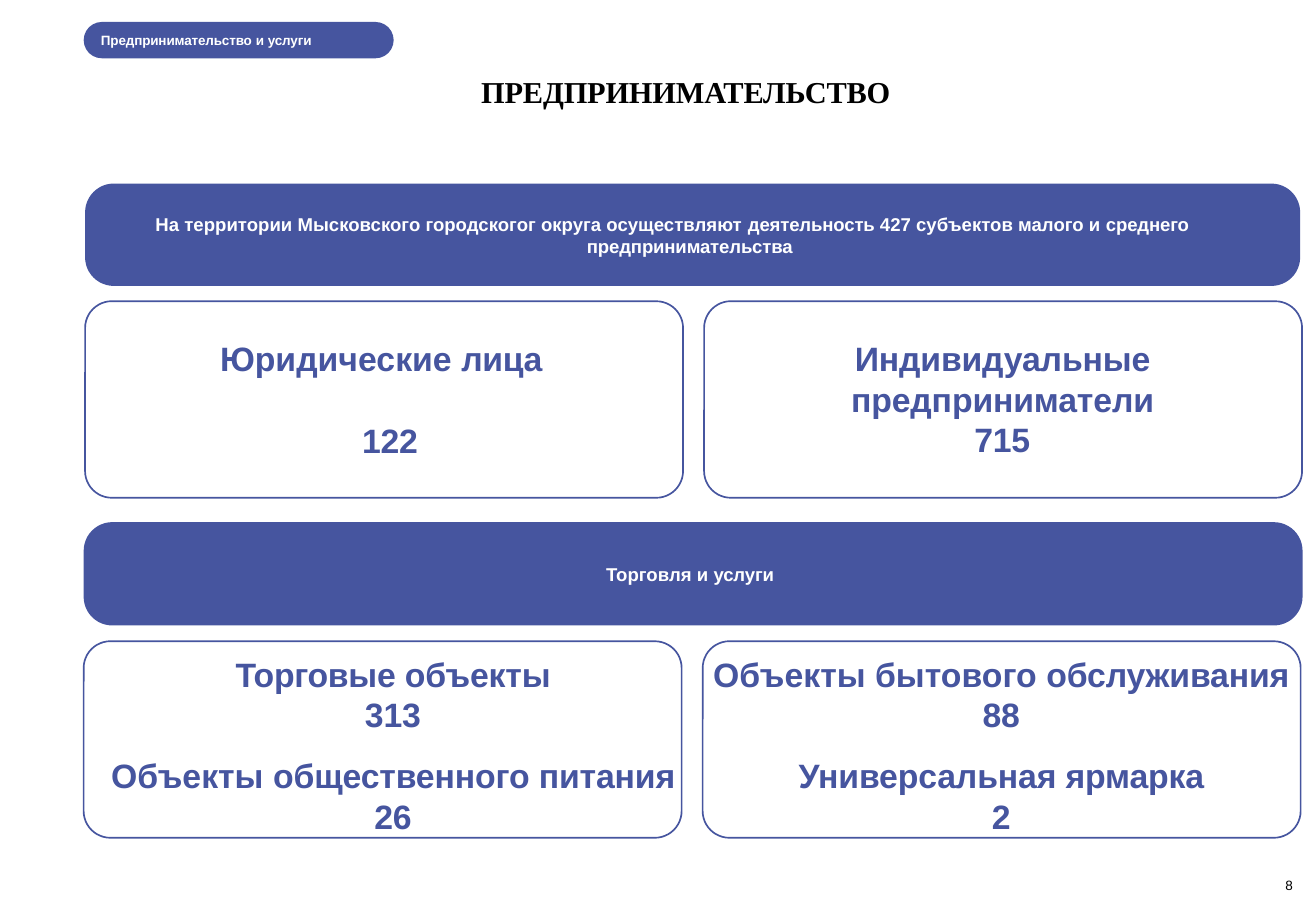
from pptx import Presentation
from pptx import util as u
from pptx.dml.color import RGBColor
from pptx.enum import shapes, text

BLUE, WHITE, BLACK = "46559F", "FFFFFF", "000000"
CARD_W, CARD_H, STEP = 12.5, 4.11, 12.94


def color(code):
    return RGBColor.from_string(code)


def panel(slide, x, y, w, h, radius, filled=True):
    """Rounded panel, either solid blue or outlined in blue."""
    box = slide.shapes.add_shape(shapes.MSO_SHAPE.ROUNDED_RECTANGLE,
                                 u.Cm(x), u.Cm(y), u.Cm(w), u.Cm(h))
    box.shadow.inherit = False
    box.adjustments[0] = radius / min(w, h)
    if filled:
        box.fill.solid()
        box.fill.fore_color.rgb = color(BLUE)
        box.line.fill.background()
    else:
        box.fill.background()
        box.line.color.rgb = color(BLUE)
        box.line.width = u.Pt(1)


def para(runs, left=0, right=0, first=0, gap=0):
    return dict(runs=runs, left=left, right=right, first=first, gap=gap)


def label(slide, x, y, w, h, paras, size, tint, center=False,
          font="Arial", bold=True, top=0.06):
    """Text box; each run is a pair of wording and letter spacing in points."""
    box = slide.shapes.add_textbox(u.Cm(x), u.Cm(y), u.Cm(w), u.Cm(h))
    frame = box.text_frame
    frame.word_wrap = True
    frame.margin_left = frame.margin_right = frame.margin_bottom = 0
    frame.margin_top = u.Cm(top)
    for i, item in enumerate(paras):
        p = frame.add_paragraph() if i else frame.paragraphs[0]
        p.alignment = text.PP_ALIGN.CENTER if center else text.PP_ALIGN.LEFT
        if item["gap"]:
            p.space_before = u.Pt(item["gap"])
        props = p._p.get_or_add_pPr()
        for key, name in (("left", "marL"), ("right", "marR"), ("first", "indent")):
            props.set(name, str(int(u.Cm(item[key]))))
        for words, space in item["runs"]:
            run = p.add_run()
            run.text = words
            run.font.name = font
            run.font.size = u.Pt(size)
            run.font.bold = bold
            run.font.color.rgb = color(tint)
            run._r.get_or_add_rPr().set("spc", str(round(space * 100)))


def main():
    deck = Presentation()
    deck.slide_width, deck.slide_height = u.Cm(27.51), u.Cm(19.05)
    slide = deck.slides.add_slide(deck.slide_layouts[6])

    # Section tag and title
    panel(slide, 1.75, 0.46, 6.48, 0.76, 0.38)
    label(slide, 2.11, 0.61, 4.57, 0.41, [para([
        ("Предпринимательство ", -0.1), ("и ", 0), ("услуги", -0.1)])], 8, WHITE)
    label(slide, 1.7, 1.47, 25.27, 0.81, [para([("ПРЕДПРИНИМАТЕЛЬСТВО", -0.1)])],
          18, BLACK, center=True, font="Times New Roman")

    # Heading bands
    panel(slide, 1.78, 3.84, 25.4, 2.14, 0.6)
    label(slide, 3.23, 4.39, 22.5, 0.97, [para([
        ("На территории Мысковского городскогог округа осуществляют ", 0),
        ("деятельность ", -0.1), ("427 субъектов малого и ", 0),
        ("среднего предпринимательства", -0.1)], left=9.04, first=-9.02)], 11, WHITE)
    panel(slide, 1.75, 10.92, 25.48, 2.16, 0.6)
    label(slide, 12.67, 11.71, 3.63, 0.53, [para([
        ("Торговля и ", 0), ("услуги", -0.1)])], 11, WHITE)

    # Outlined cards, two in each row
    for x, y in ((1.78, 6.3), (1.75, 13.41)):
        for col in range(2):
            panel(slide, x + col * STEP, y, CARD_W, CARD_H, 0.56, filled=False)

    # Upper cards
    label(slide, 4.6, 7.01, 6.83, 0.91, [para([
        ("Юридические ", 0), ("лица", -0.2)])], 20, BLUE)
    label(slide, 7.57, 8.71, 1.73, 0.89, [para([("122", -0.2)])], 20, BLUE)
    label(slide, 17.73, 7.01, 6.45, 2.59, [para([
        ("Индивидуальные предприниматели ", -0.1), ("715", -0.2)])],
        20, BLUE, center=True)

    # Lower cards
    label(slide, 2.26, 13.61, 11.91, 3.89, [
        para([("Торговые ", -0.2), ("объекты 313", -0.1)], left=2.55, right=2.55),
        para([("Объекты ", 0), ("общественного питания ", -0.1), ("26", -0.2)],
             gap=12.1)], 20, BLUE, center=True)
    label(slide, 14.86, 13.61, 12.14, 3.89, [
        para([("Объекты бытового ", 0), ("обслуживания ", -0.1), ("88", -0.2)]),
        para([("Универсальная ярмарка ", -0.1), ("2", -0.5)],
             left=1.75, right=1.75, gap=12.1)], 20, BLUE, center=True)

    # Page number
    label(slide, 26.77, 18.34, 0.56, 0.38, [para([("8", -0.2)], left=0.1)],
          8, BLACK, bold=False, top=0.01)

    deck.save("out.pptx")


if __name__ == "__main__":
    main()
